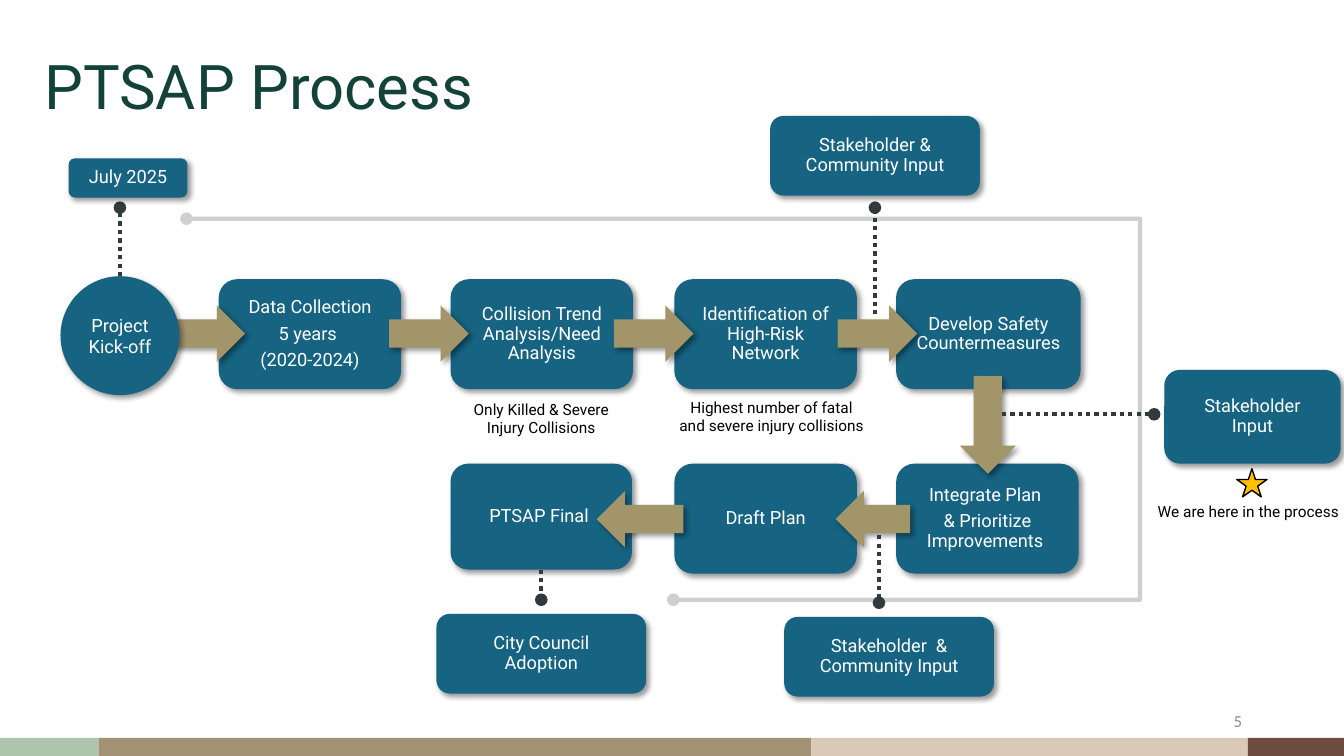
import lxml.etree
import pptx
import pptx.dml.color
import pptx.enum.dml
import pptx.enum.shapes
import pptx.enum.text
import pptx.oxml.ns
import pptx.util

CELL = pptx.util.Inches(0.1)
COLUMNS, ROWS = 133.33, 75
BLUE, TAN, WHITE, BLACK = "166382", "A3956A", "FFFFFF", "000000"
SHAPES = pptx.enum.shapes.MSO_SHAPE
ALIGN = pptx.enum.text.PP_ALIGN
MIDDLE = pptx.enum.text.MSO_ANCHOR.MIDDLE
BOX_PARAGRAPH = {"alignment": ALIGN.CENTER, "line_spacing": 0.9, "space_after": pptx.util.Pt(4.55)}


def grid(*lengths):
    """Turn grid cells into lengths on the slide."""
    return [round(length * CELL) for length in lengths]


def color(value):
    """Turn a hex string into a colour."""
    return pptx.dml.color.RGBColor.from_string(value)


def set_format(target, values):
    """Set every attribute named in the values."""
    for name, value in values.items():
        setattr(target, name, value)


def add_element(parent, tag, **attributes):
    """Append a drawing element to the parent."""
    return lxml.etree.SubElement(parent, pptx.oxml.ns.qn(tag), attributes)


def write(shape, text, size, hex_color, paragraph_values, font="Roboto", **frame_values):
    """Write one paragraph for each line of the text."""
    frame = shape.text_frame
    frame.text = text
    set_format(frame, {"word_wrap": True, **frame_values})
    for paragraph in frame.paragraphs:
        set_format(paragraph, paragraph_values)
        set_format(paragraph.font, {"name": font, "size": pptx.util.Pt(size)})
        paragraph.font.color.rgb = color(hex_color)


def add_shape(slide, kind, box, fill, shadow=True, line=None):
    """Add a filled preset shape in the box."""
    shape = slide.shapes.add_shape(kind, *grid(*box))
    shape.shadow.inherit = False
    shape.fill.solid()
    shape.fill.fore_color.rgb = color(fill)
    if line:
        shape.line.color.rgb = color(line)
        shape.line.width = pptx.util.Pt(1)
    else:
        shape.line.fill.background()
    if shadow:
        effects = shape.element.spPr.find(pptx.oxml.ns.qn("a:effectLst"))
        outer = add_element(effects, "a:outerShdw", blurRad="50800", dist="38100",
                            dir="2700000", algn="tl", rotWithShape="0")
        add_element(add_element(outer, "a:srgbClr", val=BLACK), "a:alpha", val="40000")
    return shape


def add_box(slide, box, text):
    """Add a rounded blue box with centred text."""
    shape = add_shape(slide, SHAPES.ROUNDED_RECTANGLE, box, BLUE)
    inset, = grid(2 - 0.29 * box[3] / 6)
    sides = ("left", "top", "right", "bottom")
    write(shape, text, 13, WHITE, BOX_PARAGRAPH, vertical_anchor=MIDDLE,
          **{f"margin_{side}": inset for side in sides})
    return shape


def add_text(slide, box, text, size=11, hex_color=BLACK, alignment=ALIGN.CENTER, **values):
    """Add a wrapped text box."""
    shape = slide.shapes.add_textbox(*grid(*box))
    write(shape, text, size, hex_color, {"alignment": alignment}, **values)


def add_dotted_line(slide, start, end, shape=None, site=0):
    """Add a dotted line with a round end, joined to a shape if one is given."""
    connector = slide.shapes.add_connector(
        pptx.enum.shapes.MSO_CONNECTOR.STRAIGHT, *grid(*start, *end))
    if shape is not None:
        connector.begin_connect(shape, site)
    set_format(connector.line, {"width": pptx.util.Pt(3),
                                "dash_style": pptx.enum.dml.MSO_LINE.ROUND_DOT})
    connector.line.color.rgb = color("333A3E")
    properties = connector.element.spPr
    add_element(properties.get_or_add_ln(), "a:tailEnd", type="oval")
    add_element(properties, "a:effectLst")


def add_title(slide, box):
    """Place the title placeholder."""
    title = slide.shapes.title
    set_format(title, dict(zip(("left", "top", "width", "height"), grid(*box))))
    write(title, "PTSAP Process", 44, "124238",
          {"alignment": ALIGN.LEFT, "line_spacing": 0.9}, vertical_anchor=MIDDLE)


def add_footer(slide, left, top, width, height):
    """Draw the colour bands and the page number."""
    edges = [0, 9.8, 80.5, 123.8, width]
    fills = ["ACC4AC", "A29172", "DBC9B7", "6C4C3E"]
    for start, end, fill in zip(edges, edges[1:], fills):
        add_shape(slide, SHAPES.RECTANGLE, (left + start, top, end - start, height), fill, False)
    add_text(slide, (left + 94.2, top - 3.7, 30, 4), "5", 12, "8C8C8C", ALIGN.RIGHT,
             font="Calibri", vertical_anchor=MIDDLE)


def add_upper_row(slide, left, top, width, height):
    """Draw the steps from kick-off to countermeasures."""
    steps = [
        ("Data Collection\n5 years \n(2020-2024)", 15.7, 18.1, 10.4),
        ("Collision Trend Analysis/Need Analysis", 38.7, 18.1, 32.6),
        ("Identification of High-Risk Network", 60.9, 18.1, 54.9),
        ("Develop Safety Countermeasures", 82.9, 18.3, 77.1),
    ]
    for text, step_left, step_width, arrow_left in steps:
        add_box(slide, (left + step_left, top, step_width, height), text)
    for text, step_left, step_width, arrow_left in steps:
        add_shape(slide, SHAPES.RIGHT_ARROW, (left + arrow_left, top + 2.6, 7.9, 5.6), TAN)
    circle = add_shape(slide, SHAPES.OVAL, (left, top - 0.3, 11.8, 11.8), BLUE)
    write(circle, "Project Kick-off", 13, WHITE, {"alignment": ALIGN.CENTER},
          vertical_anchor=MIDDLE)
    add_dotted_line(slide, (left + 5.9, top - 0.3), (left + 5.9, top - 7.1), circle)
    add_box(slide, (left + 0.8, top - 12, 11.8, 3.9), "July 2025")
    add_text(slide, (left + 38.7, top + 11.5, 18, 6.6), "Only Killed & Severe Injury Collisions")
    add_text(slide, (left + 60.3, top + 11.3, 20.5, 4.7),
             "Highest number of fatal and severe injury collisions")


def add_lower_row(slide, left, top, width, height):
    """Draw the steps from integration to the final plan."""
    add_box(slide, (left + 44.2, top, 18.1, height), "Integrate Plan \n& Prioritize Improvements ")
    add_box(slide, (left + 22.2, top, 18.1, height), "Draft Plan")
    final = add_box(slide, (left, top, 18, height - 0.4), "PTSAP Final ")
    for arrow_left, arrow_width in ((38.2, 7.4), (14.5, 8.6)):
        add_shape(slide, SHAPES.LEFT_ARROW,
                  (left + arrow_left, top + 2.7, arrow_width, 5.6), TAN)
    add_shape(slide, SHAPES.DOWN_ARROW, (left + 50.5, top - 8.7, 5.6, 9.7), TAN)
    add_dotted_line(slide, (left + 9, top + height - 0.4), (left + 9, top + 13.5), final, 2)
    add_box(slide, (left - 1.4, top + 14.9, 20.8, 7.9), "City Council Adoption")


def add_feedback_loop(slide, left, top, width, height):
    """Draw the grey line around the process."""
    right, bottom = left + width, top + height
    builder = slide.shapes.build_freeform(*grid(left, top))
    corners = [(right, top), (right, bottom), (left + 48.3, bottom)]
    builder.add_line_segments([grid(*corner) for corner in corners], close=False)
    loop = builder.convert_to_shape()
    loop.shadow.inherit = False
    loop.fill.background()
    loop.line.width = pptx.util.Pt(3)
    loop.line.color.rgb = color("BFBFBF")
    line = loop.element.spPr.get_or_add_ln()
    add_element(line.find(".//" + pptx.oxml.ns.qn("a:srgbClr")), "a:alpha", val="75000")
    for end in ("a:headEnd", "a:tailEnd"):
        add_element(line, end, type="oval")


def add_inputs(slide, left, top, width, height):
    """Draw the stakeholder inputs and the mark for the current step."""
    inputs = [
        ((0, 0, 20.8, 7.9), "Stakeholder & Community Input", (10.4, 19.7), (10.4, 9.1)),
        ((39.1, 25.2, 17.5, 9.3), "Stakeholder Input", (23, 29.6), (38.1, 29.6)),
        ((1.4, 49.7, 20.8, 7.9), "Stakeholder  & Community Input", (10.8, 41.6), (10.8, 48.3)),
    ]
    for (x, y, box_width, box_height), text, start, end in inputs:
        add_dotted_line(slide, (left + start[0], top + start[1]), (left + end[0], top + end[1]))
        add_box(slide, (left + x, top + y, box_width, box_height), text)
    add_text(slide, (left + 37.2, top + 37.8, 20.5, 2.9), "We are here in the process")
    add_shape(slide, SHAPES.STAR_5_POINT, (left + 46.3, top + 35, 3, 2.8), "FFC000", False, BLACK)


def main():
    """Build the process slide and save it."""
    presentation = pptx.Presentation()
    presentation.slide_width, presentation.slide_height = grid(COLUMNS, ROWS)
    slide = presentation.slides.add_slide(presentation.slide_layouts[5])
    add_footer(slide, 0, 73.2, COLUMNS, 1.8)
    add_title(slide, (3.4, 1.6, 115, 14.5))
    add_feedback_loop(slide, 18.5, 21.7, 94.6, 37.8)
    add_upper_row(slide, 6, 27.7, 101.2, 10.9)
    add_lower_row(slide, 44.7, 46, 62.3, 10.9)
    add_inputs(slide, 76.4, 11.5, 56.6, 57.6)
    presentation.save("out.pptx")


if __name__ == "__main__":
    main()
